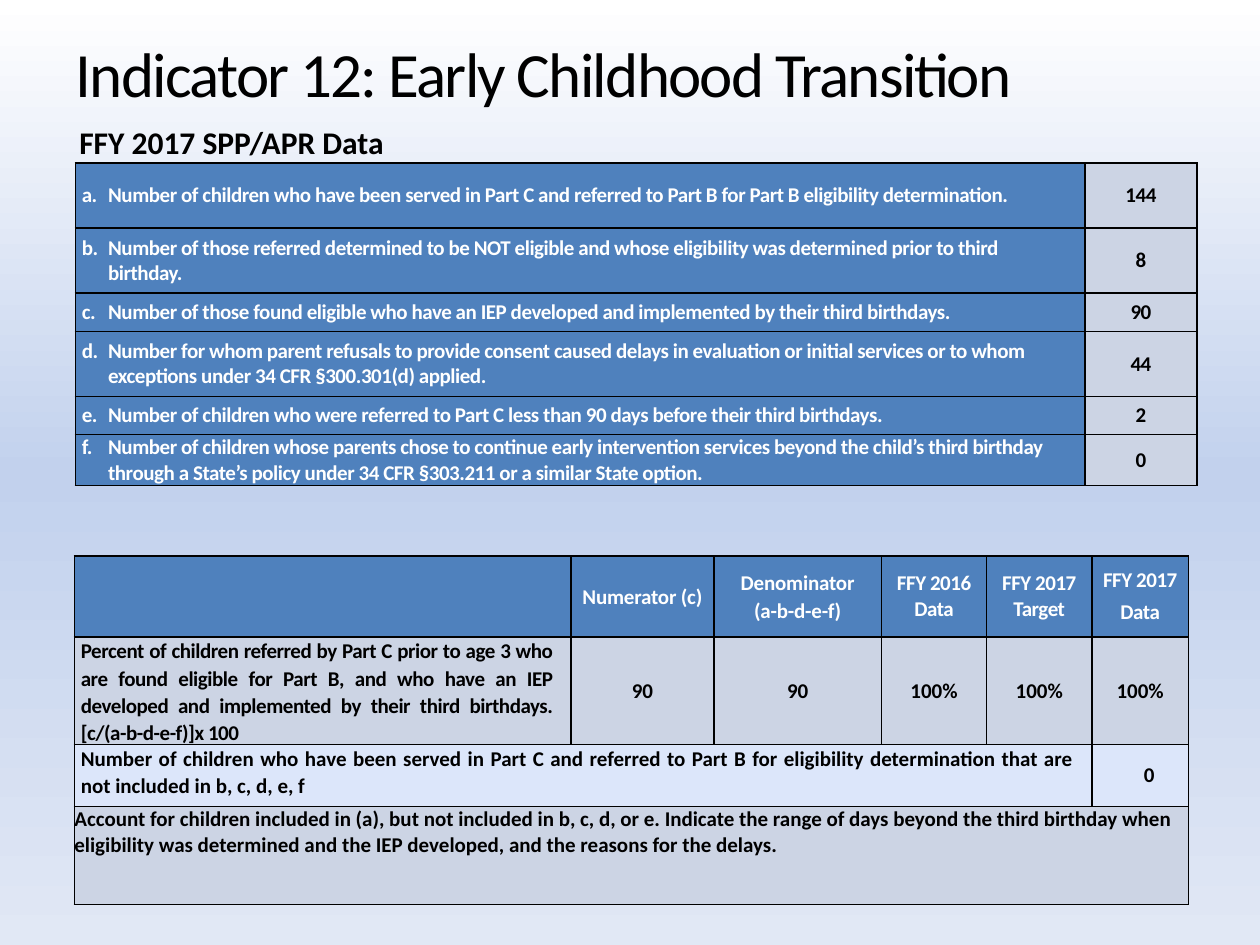
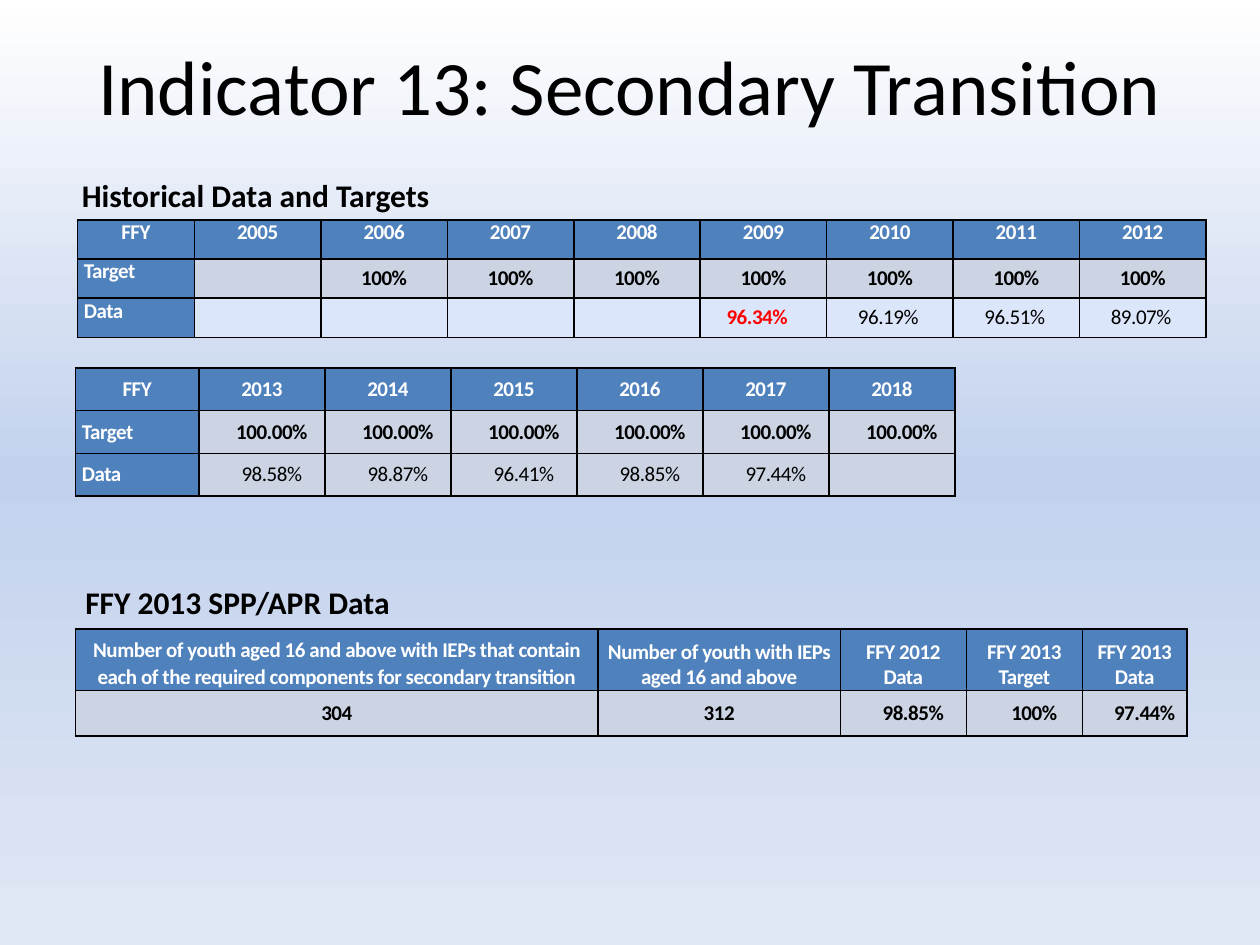
from dataclasses import dataclass, replace

import pptx
import pptx.dml.color
import pptx.enum.text
import pptx.oxml
import pptx.oxml.ns
import pptx.util

Cm = pptx.util.Cm
Pt = pptx.util.Pt
Align = pptx.enum.text.PP_ALIGN
Anchor = pptx.enum.text.MSO_ANCHOR


@dataclass(frozen=True)
class Theme:
    font: str = "Calibri"
    black: str = "000000"
    white: str = "FFFFFF"
    red: str = "FF0000"
    blue: str = "4F81BD"
    gray: str = "CCD4E4"
    pale: str = "DCE6FA"
    background: tuple = ((0, "FFFFFF"), (50, "C2D1ED"), (100, "E1E8F5"))
    heading_size: int = 18
    table_size: int = 12
    border: int = 1


THEME = Theme()


@dataclass(frozen=True)
class CellStyle:
    """Look of one cell; indents in cm, spacing and gap in points."""
    fill: str
    color: str = THEME.black
    bold: bool = True
    align: Align = Align.CENTER
    anchor: Anchor = Anchor.MIDDLE
    indent: float = 0
    hanging: float = 0
    right: float = 0
    line: float = 1.0
    spacing: float = -0.25
    gap: float = 0


HEADER = CellStyle(THEME.blue, THEME.white)
HEADER_TOP = replace(HEADER, anchor=Anchor.TOP)
HEADER_BOTTOM = replace(HEADER, anchor=Anchor.BOTTOM)
HEADER_LOOSE = replace(HEADER, line=1.07, spacing=-0.1)
LABEL = replace(HEADER, align=Align.LEFT, indent=0.13)
LABEL_TOP = replace(LABEL, anchor=Anchor.TOP)
QUESTION = replace(LABEL, indent=0.66, hanging=0.53, right=0.36)
VALUE = CellStyle(THEME.gray)
VALUE_SHIFTED = replace(VALUE, indent=0.4)
RESULT = replace(VALUE_SHIFTED, bold=False)
PROSE = replace(VALUE, align=Align.JUSTIFY, anchor=Anchor.TOP,
                indent=0.13, right=0.36, line=1.07)
PROSE_PALE = replace(PROSE, fill=THEME.pale, spacing=0)
ACCOUNT = replace(VALUE, align=Align.LEFT, anchor=Anchor.TOP, spacing=0)
VALUE_PALE = replace(VALUE, fill=THEME.pale, indent=0.36)
RESULT_PALE = replace(VALUE_PALE, align=Align.LEFT, bold=False, indent=0.63)
RESULT_RED = replace(RESULT_PALE, color=THEME.red, bold=True, indent=0.53)

# Each table row is (texts, styles); None continues the cell to its left.
QUESTIONS = [
    ("Number of children who have been served in Part C and referred to Part B "
     "for Part B eligibility determination.", "144"),
    ("Number of those referred determined to be NOT eligible and whose "
     "eligibility was determined prior to third birthday.", "8"),
    ("Number of those found eligible who have an IEP developed and implemented "
     "by their third birthdays.", "90"),
    ("Number for whom parent refusals to provide consent caused delays in "
     "evaluation or initial services or to whom exceptions under 34 CFR "
     "§300.301(d) applied.", "44"),
    ("Number of children who were referred to Part C less than 90 days before "
     "their third birthdays.", "2"),
    ("Number of children whose parents chose to continue early intervention "
     "services beyond the child’s third birthday through a State’s policy under "
     "34 CFR §303.211 or a similar State option.", "0"),
]

SLIDES = [
    {
        "title": "Indicator 12: Early Childhood Transition",
        "title_box": (1.27, 0.66, 23.7, 1.68),
        "title_format": {"size": 36, "align": Align.LEFT,
                         "anchor": Anchor.BOTTOM, "spacing": -1},
        "headings": [("FFY 2017 SPP/APR Data", 1.35, 2.36)],
        "tables": [
            {
                "at": (1.52, 3.29),
                "widths": [20.35, 2.26],
                "heights": [1.31, 1.31, 0.77, 1.31, 0.77, 1.03],
                "rows": [([f"{letter}.\t{question}", count], [QUESTION, VALUE])
                         for letter, (question, count) in zip("abcdef", QUESTIONS)],
            },
            {
                "at": (1.5, 11.21),
                "widths": [10.01, 2.88, 3.38, 2.12, 2.12, 1.95],
                "heights": [1.63, 2.16, 1.25, 1.97],
                "rows": [
                    (["", "Numerator (c)", "Denominator\n(a-b-d-e-f)",
                      "FFY 2016\nData", "FFY 2017\nTarget", "FFY 2017\nData"],
                     [HEADER, HEADER_LOOSE, HEADER_LOOSE, HEADER, HEADER,
                      replace(HEADER, gap=3.8)]),
                    (["Percent of children referred by Part C prior to age 3 who "
                      "are found eligible for Part B, and who have an IEP developed "
                      "and implemented by their third birthdays. "
                      "[c/(a-b-d-e-f)]x 100", "90", "90", "100%", "100%", "100%"],
                     [PROSE] + [replace(VALUE, spacing=0)] * 5),
                    (["Number of children who have been served in Part C and "
                      "referred to Part B for eligibility determination that are "
                      "not included in b, c, d, e, f", None, None, None, None, "0"],
                     [PROSE_PALE] * 5 + [VALUE_PALE]),
                    (["Account for children included in (a), but not included in "
                      "b, c, d, or e. Indicate the range of days beyond the third "
                      "birthday when eligibility was determined and the IEP "
                      "developed, and the reasons for the delays."] + [None] * 5,
                     [ACCOUNT] * 6),
                ],
            },
        ],
    },
    {
        "title": "Indicator 13: Secondary Transition",
        "title_box": (1.27, 0.43, 22.86, 2.54),
        "title_format": {"size": 44, "align": Align.CENTER,
                         "anchor": Anchor.MIDDLE, "spacing": 0},
        "headings": [("Historical Data and Targets", 1.4, 3.43),
                     ("FFY 2013 SPP/APR Data", 1.47, 11.63)],
        "tables": [
            {
                "at": (1.56, 4.43),
                "widths": [2.36] + [2.55] * 8,
                "heights": [0.79] * 3,
                "rows": [
                    (["FFY"] + [str(year) for year in range(2005, 2013)],
                     [HEADER_TOP] * 9),
                    (["Target", ""] + ["100%"] * 7, [LABEL_TOP] + [VALUE] * 8),
                    (["Data", "", "", "", "", "96.34%", "96.19%", "96.51%", "89.07%"],
                     [LABEL_TOP] + [VALUE_PALE] * 4 + [RESULT_RED] + [RESULT_PALE] * 3),
                ],
            },
            {
                "at": (1.52, 7.42),
                "widths": [2.49] + [2.54] * 6,
                "heights": [0.86] * 3,
                "rows": [
                    (["FFY"] + [str(year) for year in range(2013, 2019)], [HEADER] * 7),
                    (["Target"] + ["100.00%"] * 6, [LABEL] + [VALUE_SHIFTED] * 6),
                    (["Data", "98.58%", "98.87%", "96.41%", "98.85%", "97.44%", ""],
                     [LABEL] + [RESULT] * 6),
                ],
            },
            {
                "at": (1.52, 12.68),
                "widths": [10.54, 4.88, 2.54, 2.34, 2.11],
                "heights": [1.24, 0.92],
                "rows": [
                    (["Number of youth aged 16 and above with IEPs that contain each "
                      "of the required components for secondary transition",
                      "Number of youth with IEPs aged 16 and above",
                      "FFY 2012\nData", "FFY 2013\nTarget", "FFY 2013\nData"],
                     [replace(HEADER_BOTTOM, line=1.07)] + [HEADER_BOTTOM] * 4),
                    (["304", "312", "98.85%", "100%", "97.44%"],
                     [VALUE] * 2 + [VALUE_SHIFTED] * 3),
                ],
            },
        ],
    },
]


def rgb(color):
    return pptx.dml.color.RGBColor.from_string(color)


def format_paragraph(paragraph, size, color, bold, align, spacing=0):
    paragraph.alignment = align
    font = paragraph.font
    font.name, font.size, font.bold = THEME.font, Pt(size), bold
    font.color.rgb = rgb(color)
    properties = paragraph._p.get_or_add_pPr()
    properties.find(pptx.oxml.ns.qn("a:defRPr")).set("spc", str(round(spacing * 100)))
    return properties


def set_background(master):
    fill = master.background.fill
    fill.gradient()
    fill.gradient_angle = 270
    stops = master.element.find(".//" + pptx.oxml.ns.qn("a:gsLst"))
    stops.clear()
    for position, color in THEME.background:
        stops.append(pptx.oxml.parse_xml(
            f'<a:gs {pptx.oxml.ns.nsdecls("a")} pos="{position * 1000}">'
            f'<a:srgbClr val="{color}"/></a:gs>'))


def add_borders(cell):
    properties = cell._tc.get_or_add_tcPr()
    for side in "LRTB":
        properties.append(pptx.oxml.parse_xml(
            f'<a:ln{side} {pptx.oxml.ns.nsdecls("a")} w="{Pt(THEME.border)}">'
            f'<a:solidFill><a:srgbClr val="{THEME.black}"/></a:solidFill></a:ln{side}>'))


def format_cell(cell, style):
    add_borders(cell)
    cell.fill.solid()
    cell.fill.fore_color.rgb = rgb(style.fill)
    cell.margin_left = cell.margin_top = cell.margin_bottom = 0
    cell.margin_right = Cm(style.right)
    cell.vertical_anchor = style.anchor
    for index, paragraph in enumerate(cell.text_frame.paragraphs):
        properties = format_paragraph(paragraph, THEME.table_size, style.color,
                                      style.bold, style.align, style.spacing)
        properties.set("marL", str(Cm(style.indent)))
        properties.set("indent", str(-Cm(style.hanging)))
        paragraph.line_spacing = style.line
        paragraph.space_before = Pt(style.gap if index else 0)


def add_data_table(slide, content):
    left, top = content["at"]
    widths, heights = content["widths"], content["heights"]
    table = slide.shapes.add_table(
        len(heights), len(widths), Cm(left), Cm(top),
        Cm(sum(widths)), Cm(sum(heights))).table
    table.first_row = table.horz_banding = False
    for column, width in zip(table.columns, widths):
        column.width = Cm(width)
    for row_index, (texts, styles) in enumerate(content["rows"]):
        table.rows[row_index].height = Cm(heights[row_index])
        start = 0
        for column_index, (text, style) in enumerate(zip(texts, styles)):
            cell = table.cell(row_index, column_index)
            if text is not None:
                start = column_index
                cell.text = text
            elif texts[column_index + 1:column_index + 2] != [None]:
                table.cell(row_index, start).merge(cell)
            format_cell(cell, style)


def add_title(slide, text, box, title_format):
    title = slide.shapes.title
    title.left, title.top, title.width, title.height = (Cm(length) for length in box)
    frame = title.text_frame
    frame.text = text
    frame.auto_size = pptx.enum.text.MSO_AUTO_SIZE.NONE
    frame.vertical_anchor = title_format["anchor"]
    format_paragraph(frame.paragraphs[0], title_format["size"], THEME.black, False,
                     title_format["align"], title_format["spacing"])


def add_heading(slide, text, left, top):
    frame = slide.shapes.add_textbox(Cm(left), Cm(top), Cm(8.2), Cm(1.02)).text_frame
    frame.word_wrap = True
    frame.text = text
    format_paragraph(frame.paragraphs[0], THEME.heading_size, THEME.black, True, Align.LEFT)


def main():
    presentation = pptx.Presentation()
    presentation.slide_width, presentation.slide_height = Cm(25.4), Cm(19.05)
    set_background(presentation.slide_master)
    for content in SLIDES:
        slide = presentation.slides.add_slide(presentation.slide_layouts[5])
        add_title(slide, content["title"], content["title_box"], content["title_format"])
        for heading in content["headings"]:
            add_heading(slide, *heading)
        for table in content["tables"]:
            add_data_table(slide, table)
    presentation.save("out.pptx")


if __name__ == "__main__":
    main()
